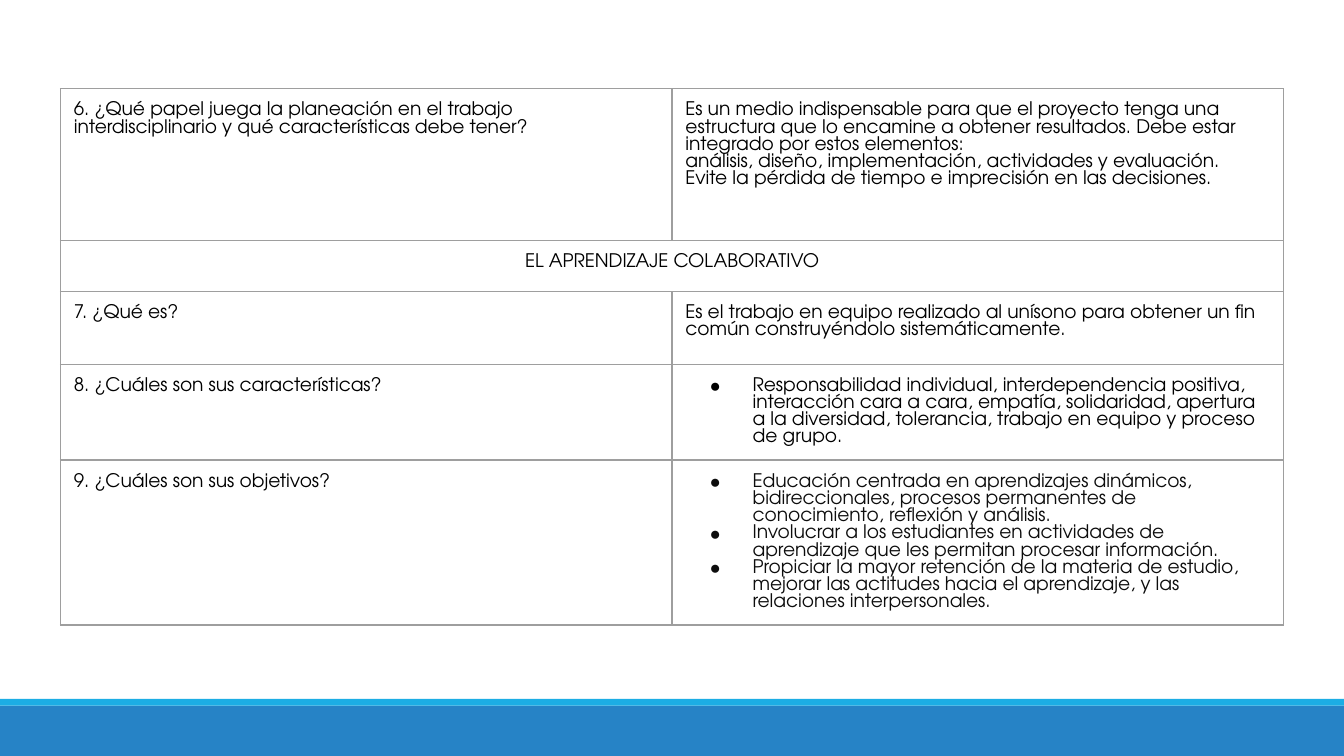
from lxml import etree
from pptx import Presentation
from pptx import util as u
from pptx.dml import color as c
from pptx.enum import shapes, text
from pptx.oxml import ns

FONT = "TeX Gyre Adventor"
BLACK, DARK, WHITE, GRAY = "000000", "0D0D0D", "FFFFFF", "9E9E9E"
WIDTH = 10
HEIGHT = WIDTH * 9 / 16
LEFT, TOP, COLUMN_WIDTH, MARGIN = 0.45, 0.66, 4.55, 0.1
BARS = [(5.25, 0.38, "2683C6"), (5.2, 0.05, "1CADE4")]
ROWS = [
    {
        "height": 1.13,
        "fill": WHITE,
        "question": "6. ¿Qué papel juega la planeación en el trabajo interdisciplinario "
                    "y qué características debe tener?",
        "answers": [
            "Es un medio indispensable para que el proyecto tenga una estructura que lo "
            "encamine a obtener resultados. Debe estar integrado por estos elementos:",
            "análisis, diseño, implementación, actividades y evaluación.",
            "Evite la pérdida de tiempo e imprecisión en las decisiones.",
        ],
    },
    {"height": 0.38, "heading": "EL APRENDIZAJE COLABORATIVO"},
    {
        "height": 0.54,
        "question": "7. ¿Qué es?",
        "answers": [
            "Es el trabajo en equipo realizado al unísono para obtener un fin común "
            "construyéndolo sistemáticamente.",
        ],
    },
    {
        "height": 0.54,
        "question": "8. ¿Cuáles son sus características?",
        "bullets": True,
        "answers": [
            "Responsabilidad individual, interdependencia positiva, interacción cara a cara, "
            "empatía, solidaridad, apertura a la diversidad, tolerancia, trabajo en equipo "
            "y proceso de grupo.",
        ],
    },
    {
        "height": 0.54,
        "question": "9. ¿Cuáles son sus objetivos?",
        "bullets": True,
        "color": DARK,
        "answers": [
            "Educación centrada en aprendizajes dinámicos, bidireccionales, procesos "
            "permanentes de conocimiento, reflexión y análisis.",
            "Involucrar a los estudiantes en actividades de aprendizaje que les permitan "
            "procesar información.",
            "Propiciar la mayor retención de la materia de estudio, mejorar las actitudes "
            "hacia el aprendizaje, y las relaciones interpersonales.",
        ],
    },
]


def rgb(value):
    """Return the colour for a hex string."""
    return c.RGBColor.from_string(value)


def add_bar(slide, top, height, color):
    """Add a full-width footer bar."""
    bar = slide.shapes.add_shape(
        shapes.MSO_SHAPE.RECTANGLE, 0, u.Inches(top), u.Inches(WIDTH), u.Inches(height))
    bar.shadow.inherit = False
    bar.fill.solid()
    bar.fill.fore_color.rgb = rgb(color)
    bar.line.fill.background()


def style_cell(cell, fill):
    """Set the margins, borders and fill of a cell."""
    cell.margin_left = cell.margin_right = u.Inches(MARGIN)
    cell.margin_top = cell.margin_bottom = u.Inches(MARGIN)
    properties = cell._tc.get_or_add_tcPr()
    for side in ("lnL", "lnR", "lnT", "lnB"):
        border = etree.SubElement(properties, ns.qn(f"a:{side}"), w=str(u.Pt(0.75)))
        solid = etree.SubElement(border, ns.qn("a:solidFill"))
        etree.SubElement(solid, ns.qn("a:srgbClr"), val=GRAY)
    if fill:
        cell.fill.solid()
        cell.fill.fore_color.rgb = rgb(fill)
    else:
        cell.fill.background()


def add_bullet(paragraph, color):
    """Give a paragraph a hanging bullet."""
    properties = paragraph._p.get_or_add_pPr()
    properties.set("marL", str(u.Inches(0.5)))
    properties.set("indent", str(u.Inches(-0.32)))
    bullet_color = etree.SubElement(properties, ns.qn("a:buClr"))
    etree.SubElement(bullet_color, ns.qn("a:srgbClr"), val=color)
    etree.SubElement(properties, ns.qn("a:buFont"), typeface="Arial")
    etree.SubElement(properties, ns.qn("a:buChar"), char="●")


def write_cell(cell, lines, color=BLACK, bullets=False, align=text.PP_ALIGN.LEFT):
    """Write one paragraph per line into a cell."""
    frame = cell.text_frame
    for index, line in enumerate(lines):
        paragraph = frame.add_paragraph() if index else frame.paragraphs[0]
        paragraph.alignment = align
        paragraph.line_spacing = u.Pt(9.25)
        if bullets:
            add_bullet(paragraph, color)
        run = paragraph.add_run()
        run.text = line
        run.font.name = FONT
        run.font.size = u.Pt(10)
        run.font.color.rgb = rgb(color)


def add_questions(slide):
    """Add the table of questions and answers."""
    height = sum(row["height"] for row in ROWS)
    table = slide.shapes.add_table(
        len(ROWS), 2, u.Inches(LEFT), u.Inches(TOP),
        u.Inches(2 * COLUMN_WIDTH), u.Inches(height)).table
    table.first_row = table.horz_banding = False
    for index, row in enumerate(ROWS):
        table.rows[index].height = u.Inches(row["height"])
        left, right = table.cell(index, 0), table.cell(index, 1)
        for cell in (left, right):
            style_cell(cell, row.get("fill"))
        if "heading" in row:
            left.merge(right)
            write_cell(left, [row["heading"]], align=text.PP_ALIGN.CENTER)
        else:
            write_cell(left, [row["question"]])
            write_cell(right, row["answers"], row.get("color", BLACK), row.get("bullets", False))


def main():
    """Build and save the slide."""
    presentation = Presentation()
    presentation.slide_width = u.Inches(WIDTH)
    presentation.slide_height = u.Inches(HEIGHT)
    slide = presentation.slides.add_slide(presentation.slide_layouts[6])
    for bar in BARS:
        add_bar(slide, *bar)
    add_questions(slide)
    presentation.save("out.pptx")


if __name__ == "__main__":
    main()
